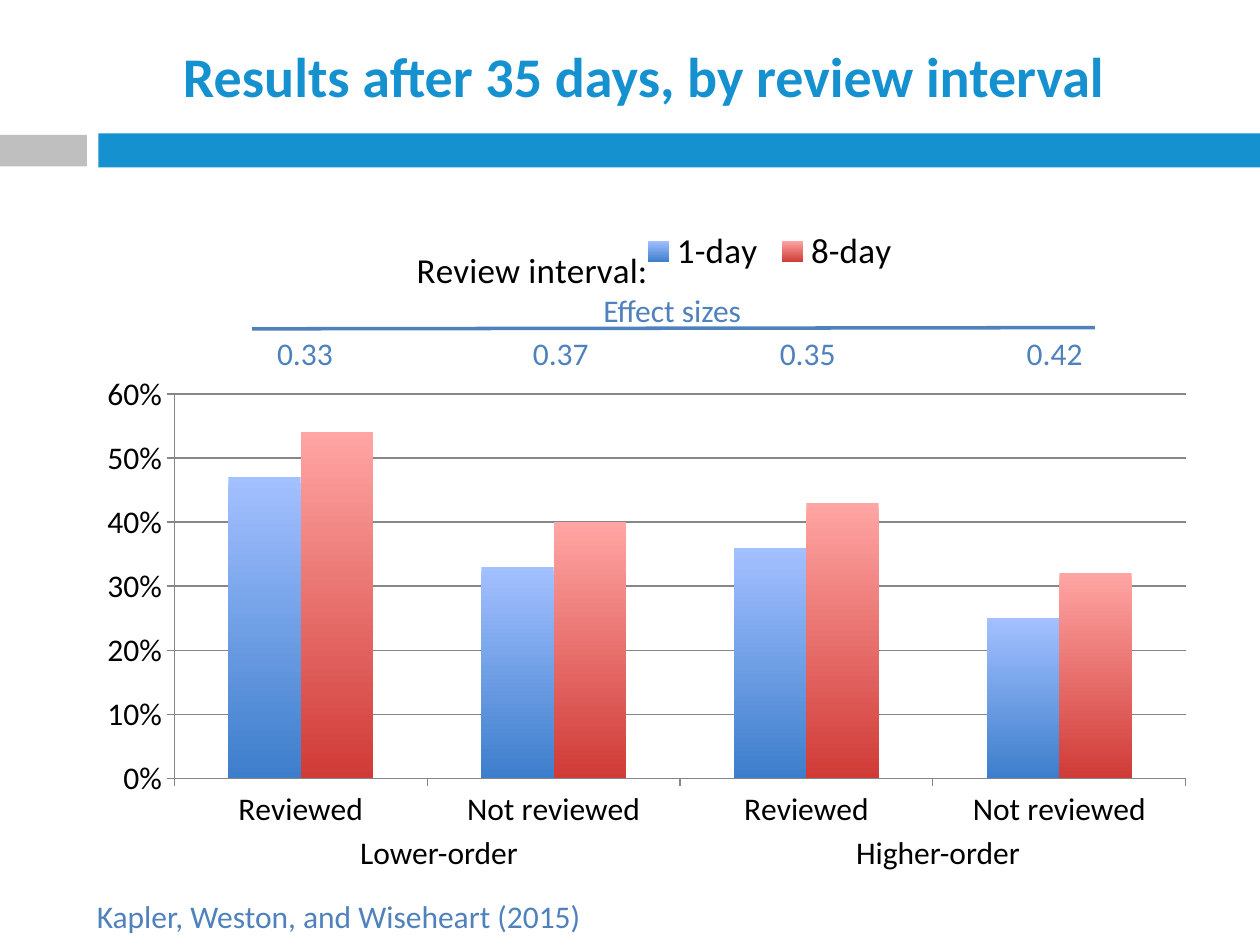
from pptx import Presentation
from pptx.chart.data import CategoryChartData
from pptx.dml.color import RGBColor
from pptx.enum.chart import XL_CHART_TYPE, XL_LEGEND_POSITION, XL_TICK_MARK
from pptx.enum.shapes import MSO_CONNECTOR, MSO_SHAPE
from pptx.enum.text import MSO_ANCHOR, MSO_AUTO_SIZE, PP_ALIGN
from pptx.oxml import parse_xml
from pptx.oxml.ns import nsdecls, qn
from pptx.util import Inches, Pt

COLORS = {"brand": "1691D0", "gray": "BFBFBF", "note": "4F81BD",
          "text": "000000", "axis": "868686"}
CATS = ["Reviewed", "Not reviewed"] * 2
SERIES = [("1-day", (0.47, 0.33, 0.36, 0.25), ("A3C0FF", "3D7ECC")),
          ("8-day", (0.54, 0.40, 0.43, 0.32), ("FFA5A3", "D03B37"))]
EFFECTS = [(1.86, "0.33"), (3.89, "0.37"), (5.85, "0.35"), (7.81, "0.42")]
GROUPS = [(2, "Lower-order"), (5.96, "Higher-order")]


def color(name):
    """Look up a named colour."""
    return RGBColor.from_string(COLORS[name])


def style(font, size, name="text", bold=False):
    """Set face, size, colour and weight."""
    font.name, font.size, font.bold = "Calibri", Pt(size), bold
    font.color.rgb = color(name)


def add_band(slide, left, top, width, height, name):
    """Draw one part of the band below the title."""
    band = slide.shapes.add_shape(
        MSO_SHAPE.RECTANGLE, *map(Inches, (left, top, width, height)))
    band.shadow.inherit = False
    band.fill.solid()
    band.fill.fore_color.rgb = color(name)
    band.line.fill.background()


def set_title(slide, text):
    """Place and format the slide title."""
    title = slide.shapes.title
    title.left, title.top = Inches(0.78), Inches(0.26)
    title.width, title.height = Inches(8.66), Inches(0.68)
    frame = title.text_frame
    frame.text = text
    frame.vertical_anchor = MSO_ANCHOR.MIDDLE
    para = frame.paragraphs[0]
    para.alignment = PP_ALIGN.CENTER
    style(para.font, 32, "brand", True)


def add_label(slide, text, left, top, width, name="note",
              align=PP_ALIGN.CENTER):
    """Add a one-line text box."""
    box = slide.shapes.add_textbox(
        *map(Inches, (left, top, width, 0.4)))
    frame = box.text_frame
    frame.word_wrap = True
    frame.auto_size = MSO_AUTO_SIZE.SHAPE_TO_FIT_TEXT
    frame.text = text
    para = frame.paragraphs[0]
    para.alignment = align
    style(para.font, 18, name)


def add_rule(slide, start, end):
    """Draw the line under the effect-size heading."""
    rule = slide.shapes.add_connector(
        MSO_CONNECTOR.STRAIGHT, *map(Inches, start + end))
    rule.line.color.rgb = color("note")
    rule.line.width = Pt(2)
    rule.element.spPr.append(parse_xml(f"<a:effectLst {nsdecls('a')}/>"))


def set_layout(part, index, target="", **sizes):
    """Give a chart part a fixed place in fractions of the chart."""
    for old in part.findall(qn("c:layout")):
        part.remove(old)
    inner = f'<c:layoutTarget val="{target}"/>' if target else ""
    modes = "".join(f'<c:{key}Mode val="edge"/>' for key in "xy")
    vals = "".join(f'<c:{key} val="{val}"/>' for key, val in sizes.items())
    part.insert(index, parse_xml(
        f"<c:layout {nsdecls('c')}><c:manualLayout>{inner}{modes}{vals}"
        "</c:manualLayout></c:layout>"))


def style_axes(chart):
    """Format both axes and the grid."""
    val, cat = chart.value_axis, chart.category_axis
    val.minimum_scale, val.maximum_scale, val.major_unit = 0, 0.6, 0.1
    val.tick_labels.number_format = "0%"
    val.tick_labels.number_format_is_linked = False
    val.has_major_gridlines = True
    for axis in (val, cat):
        axis.major_tick_mark = XL_TICK_MARK.OUTSIDE
        style(axis.tick_labels.font, 18)
    for line in (val.format.line, cat.format.line,
                 val.major_gridlines.format.line):
        line.color.rgb = color("axis")
        line.width = Pt(0.75)


def add_chart(slide):
    """Add the clustered columns with title and legend side by side."""
    data = CategoryChartData(number_format="0%")
    data.categories = CATS
    for name, vals, _ in SERIES:
        data.add_series(name, vals)
    chart = slide.shapes.add_chart(
        XL_CHART_TYPE.COLUMN_CLUSTERED,
        *map(Inches, (0.67, 1.75, 8.92, 4.92)), data).chart
    style(chart.font, 18)
    style_axes(chart)
    plot = chart.plots[0]
    plot.gap_width, plot.overlap, plot.vary_by_categories = 150, 0, False
    for series, (_, _, shades) in zip(plot.series, SERIES):
        fill = series.format.fill
        fill.gradient()
        fill.gradient_angle = 270
        for stop, shade in zip(fill.gradient_stops, shades):
            stop.color.rgb = RGBColor.from_string(shade)
    chart.has_title = True
    frame = chart.chart_title.text_frame
    frame.text = "Review interval:"
    style(frame.paragraphs[0].font, 20)
    chart.has_legend = True
    chart.legend.position = XL_LEGEND_POSITION.TOP
    chart.legend.include_in_layout = False
    style(chart.legend.font, 20)
    root = chart.element.find(qn("c:chart"))
    set_layout(root.find(qn("c:title")), 1, x=0.29, y=0.03)
    set_layout(root.find(qn("c:legend")), 1, x=0.49, y=0.01, w=0.24, h=0.08)
    set_layout(root.find(qn("c:plotArea")), 0, "inner",
               x=0.08, y=0.28, w=0.9, h=0.62)


def main():
    """Build and save the slide."""
    deck = Presentation()
    deck.slide_width, deck.slide_height = Inches(10), Inches(7.5)
    slide = deck.slides.add_slide(deck.slide_layouts[5])
    add_band(slide, 0.78, 1.06, 9.22, 0.27, "brand")
    add_band(slide, 0, 1.07, 0.69, 0.25, "gray")
    set_title(slide, "Results after 35 days, by review interval")
    for left, text in GROUPS:
        add_label(slide, text, left, 6.56, 2.97, "text")
    add_label(slide, "Kapler, Weston, and Wiseheart (2015)",
              0.67, 7.07, 4.34, align=PP_ALIGN.LEFT)
    add_chart(slide)
    for left, text in EFFECTS:
        add_label(slide, text, left, 2.6, 1.12)
    add_label(slide, "Effect sizes", 4.39, 2.26, 1.89)
    add_rule(slide, (2, 2.61), (8.69, 2.6))
    deck.save("out.pptx")


if __name__ == "__main__":
    main()
